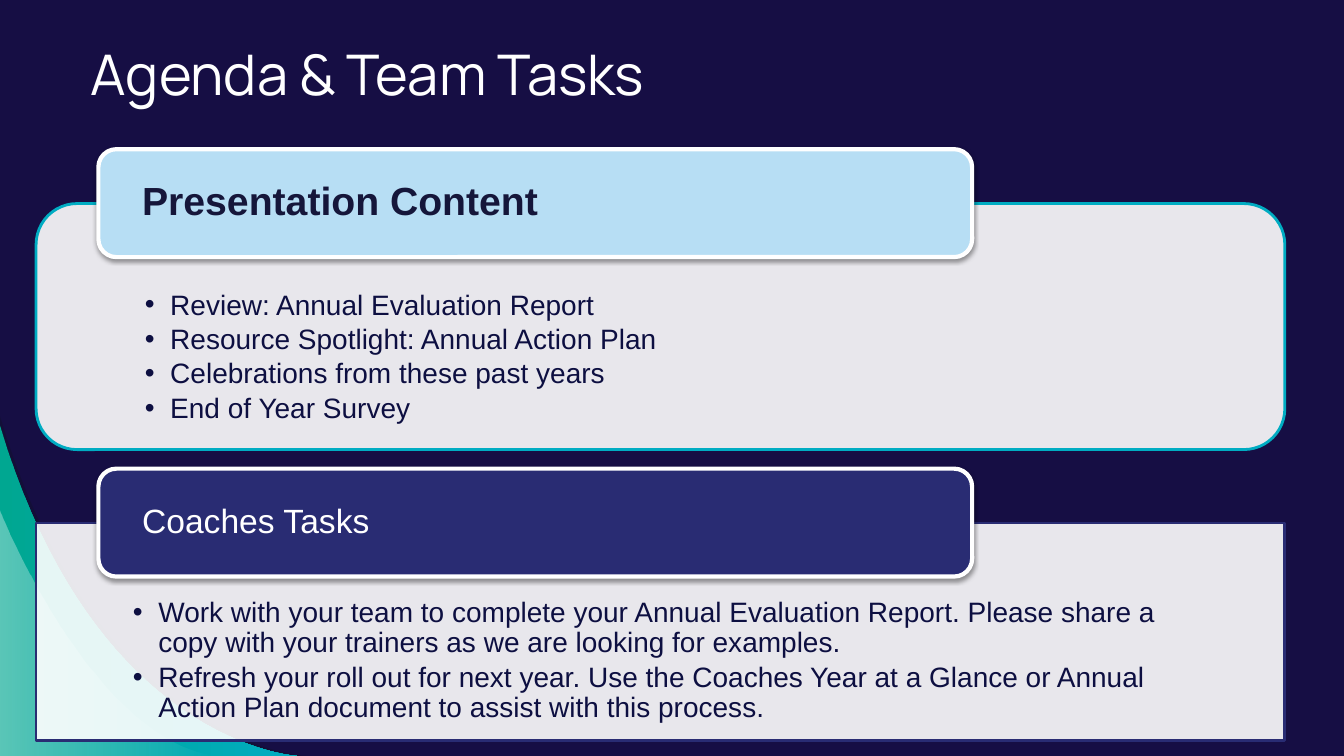
from dataclasses import dataclass

from lxml.etree import SubElement
from pptx import Presentation
from pptx.dml.color import RGBColor
from pptx.enum.shapes import MSO_SHAPE
from pptx.enum.text import MSO_ANCHOR, MSO_AUTO_SIZE, PP_ALIGN
from pptx.oxml.ns import qn
from pptx.util import Cm, Pt


@dataclass(frozen=True)
class Theme:
    night: str = "160E44"
    shade: str = "12102F"
    teal: str = "00ACC2"
    green: str = "00A791"
    white: str = "FFFFFF"
    sky: str = "B7DEF4"
    indigo: str = "292C73"
    ink: str = "0D0F41"
    heading: str = "15163A"
    title_font: str = "Manrope"
    body_font: str = "Arial"
    title_size: int = 40
    strong_size: int = 28
    tab_size: int = 24
    list_size: int = 20


T = Theme()


def rgb(color):
    return RGBColor.from_string(color)


def set_alpha(sp, *percents):
    colors = sp.element.spPr.iter(qn("a:srgbClr"))
    for color, percent in zip(colors, percents):
        SubElement(color, qn("a:alpha"), val=str(percent * 1000))


def add_shadow(sp):
    effects = sp.element.spPr.find(qn("a:effectLst"))
    shadow = SubElement(effects, qn("a:outerShdw"), blurRad=str(Pt(3.1)),
                        dist=str(Pt(1.6)), dir="5400000", rotWithShape="0")
    color = SubElement(shadow, qn("a:srgbClr"), val="000000")
    SubElement(color, qn("a:alpha"), val="38000")


def add_bullet(p):
    pPr = p._p.get_or_add_pPr()
    pPr.set("marL", str(Cm(0.64)))
    pPr.set("indent", str(-Cm(0.64)))
    SubElement(pPr, qn("a:buFont"), typeface=T.body_font)
    SubElement(pPr, qn("a:buChar"), char="•")


def write(sp, lines, *, size, color, font=T.body_font, bold=False, bullets=False,
          anchor=MSO_ANCHOR.MIDDLE, margins=(0, 0, 0, 0), spacing=0.9, after=0):
    tf = sp.text_frame
    tf.word_wrap = True
    tf.auto_size = MSO_AUTO_SIZE.NONE
    tf.vertical_anchor = anchor
    tf.margin_left, tf.margin_top, tf.margin_right, tf.margin_bottom = map(Cm, margins)
    for i, line in enumerate(lines):
        p = tf.add_paragraph() if i else tf.paragraphs[0]
        p.alignment = PP_ALIGN.LEFT
        p.line_spacing = spacing
        p.space_before, p.space_after = Pt(0), Pt(after)
        if bullets:
            p.level = 1
            add_bullet(p)
        r = p.add_run()
        r.text = line
        r.font.name, r.font.size, r.font.bold = font, Pt(size), bold
        r.font.color.rgb = rgb(color)


def add_box(s, kind, box, fill, line, width):
    sp = s.shapes.add_shape(kind, *map(Cm, box))
    sp.shadow.inherit = False
    sp.fill.solid()
    sp.fill.fore_color.rgb = rgb(fill)
    sp.line.color.rgb = rgb(line)
    sp.line.width = Pt(width)
    return sp


def move(sp, box):
    sp.left, sp.top, sp.width, sp.height = map(Cm, box)


def bezier(points, steps=40):
    a, b, c, d = points
    for i in range(steps + 1):
        t = i / steps
        u = 1 - t
        yield tuple(Cm(u**3 * w + 3 * u * u * t * x + 3 * u * t * t * y + t**3 * z)
                    for w, x, y, z in zip(a, b, c, d))


def add_wave(s, box, bend1, bend2, colors, alphas):
    x, y, w, h = box
    corners = [(0, 0), bend1, bend2, (1, 1)]
    curve = list(bezier([(x + w * fx, y + h * fy) for fx, fy in corners]))
    fb = s.shapes.build_freeform(*curve[0])
    fb.add_line_segments(curve[1:] + [(Cm(x), Cm(y + h))], close=True)
    sp = fb.convert_to_shape()
    sp.shadow.inherit = False
    sp.line.fill.background()
    if len(colors) == 1:
        sp.fill.solid()
        sp.fill.fore_color.rgb = rgb(colors[0])
    else:
        sp.fill.gradient()
        sp.fill.gradient_angle = 0
        for stop, color in zip(sp.fill.gradient_stops, colors):
            stop.color.rgb = rgb(color)
    set_alpha(sp, *alphas)


def add_corner(s, box):
    x, y, w, h = box
    bottom = y + h
    waves = [
        (7.7, 8.56, (0.32, 0.97), (1, 1), [T.shade], [54]),
        (7.49, 8.33, (0.32, 0.97), (1, 1), [T.green, T.teal], []),
        (5.49, 6.2, (0, 0), (0.42, 0.94), [T.white, T.white], [36, 0]),
    ]
    for width, height, bend1, bend2, colors, alphas in waves:
        add_wave(s, (x, bottom - height, width, height), bend1, bend2, colors, alphas)


def add_title(s, box):
    sp = s.shapes.title
    move(sp, box)
    write(sp, ["Agenda & Team Tasks"], size=T.title_size, color=T.white,
          font=T.title_font, margins=(0.25,) * 4, spacing=1.0)


def add_section(s, box, body, heading, items, *, kind, line, fill, color, size,
                bold=False, inset=0):
    x, y, w, h = box
    card = add_box(s, kind, box, T.white, line, 2)
    set_alpha(card, 90)

    move(body, (x + inset, y + inset, w - 2 * inset, h - 2 * inset))
    s.shapes.element.append(body.element)
    write(body, items, size=T.list_size, color=T.ink, bullets=True,
          anchor=MSO_ANCHOR.TOP, margins=(2.44, 1.9, 2.44, 0.41), after=3)

    tab = add_box(s, MSO_SHAPE.ROUNDED_RECTANGLE,
                  (x + 1.57, y - 1.37, 22.02, 2.72), fill, T.white, 3)
    add_shadow(tab)
    write(tab, [heading], size=size, color=color, bold=bold,
          margins=(0.97, 0, 0.97, 0))


def main():
    prs = Presentation()
    prs.slide_width, prs.slide_height = Cm(33.87), Cm(19.05)
    s = prs.slides.add_slide(prs.slide_layouts[3])
    s.background.fill.solid()
    s.background.fill.fore_color.rgb = rgb(T.night)

    add_corner(s, (0, 10.49, 7.7, 8.56))
    add_section(
        s, (0.91, 5.13, 31.47, 6.2), s.placeholders[1], "Presentation Content",
        ["Review: Annual Evaluation Report",
         "Resource Spotlight: Annual Action Plan",
         "Celebrations from these past years",
         "End of Year Survey"],
        kind=MSO_SHAPE.ROUNDED_RECTANGLE, line=T.teal, fill=T.sky,
        color=T.heading, size=T.strong_size, bold=True, inset=0.3)
    add_section(
        s, (0.91, 13.18, 31.47, 5.49), s.placeholders[2], "Coaches Tasks",
        ["Work with your team to complete your Annual Evaluation Report. "
         "Please share a copy with your trainers as we are looking for examples.",
         "Refresh your roll out for next year. Use the Coaches Year at a Glance "
         "or Annual Action Plan document to assist with this process."],
        kind=MSO_SHAPE.RECTANGLE, line=T.indigo, fill=T.indigo,
        color=T.white, size=T.tab_size)
    add_title(s, (2.03, 0.66, 26.06, 2.34))
    prs.save("out.pptx")


if __name__ == "__main__":
    main()
